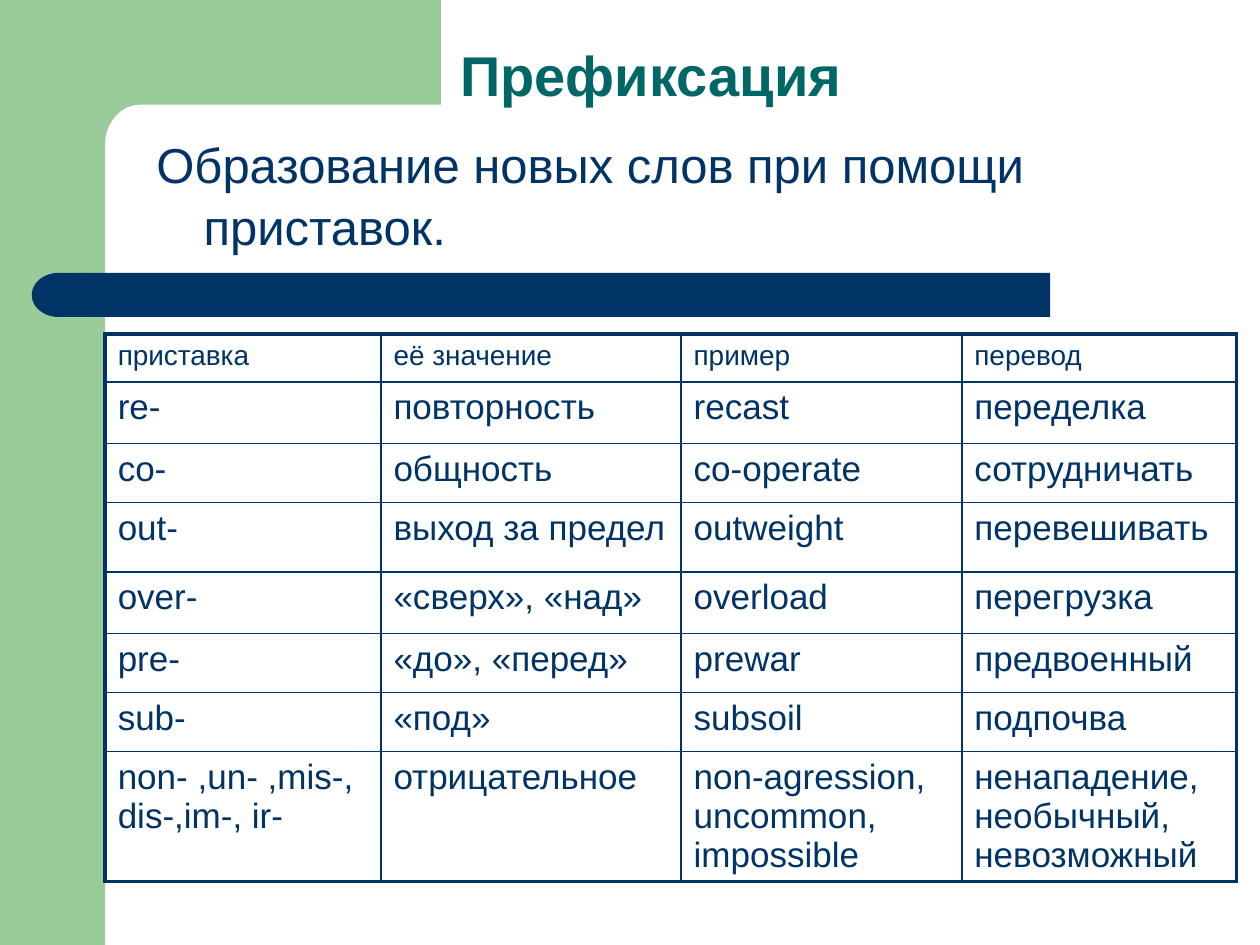
"""Build a slide on English prefixation: title, definition and a table of prefixes."""
from dataclasses import dataclass
from math import cos, pi, sin

from lxml import etree
from pptx import Presentation
from pptx.dml.color import RGBColor
from pptx.enum.shapes import MSO_SHAPE
from pptx.enum.text import MSO_ANCHOR, MSO_AUTO_SIZE, PP_ALIGN
from pptx.oxml.ns import qn
from pptx.util import Cm, Pt

RECTANGLE = MSO_SHAPE.RECTANGLE
DELAY = MSO_SHAPE.FLOWCHART_DELAY
BOTTOM = MSO_ANCHOR.BOTTOM
TOP = MSO_ANCHOR.TOP
NO_AUTOFIT = MSO_AUTO_SIZE.NONE
CENTER = PP_ALIGN.CENTER


@dataclass(frozen=True)
class Theme:
    green: str = "99CC99"
    navy: str = "003366"
    teal: str = "006666"
    font: str = "Arial"
    title: int = 32
    definition: int = 28
    header: int = 16
    entry: int = 20
    frame: float = 2.25
    grid: float = 1


theme = Theme()


def style(paragraph, size, color, bold=False):
    font = paragraph.font
    font.name, font.size, font.bold = theme.font, Pt(size), bold
    font.color.rgb = RGBColor.from_string(color)


def paint(shape, color):
    shape.shadow.inherit = False
    shape.fill.solid()
    shape.fill.fore_color.rgb = RGBColor.from_string(color)
    shape.line.fill.background()


prs = Presentation()
prs.slide_width, prs.slide_height = Cm(25.4), Cm(19.05)
slide = prs.slides.add_slide(prs.slide_layouts[1])
shapes = slide.shapes

for kind, left, top, width, height, color, turn in (
    (RECTANGLE, 0, 0, 2.12, 19.05, theme.green, 0),
    (RECTANGLE, 1.7, 5.5, 19.47, 0.89, theme.navy, 0),
    (DELAY, 0.64, 5.5, 1.08, 0.89, theme.navy, 180),
):
    band = shapes.add_shape(kind, Cm(left), Cm(top), Cm(width), Cm(height))
    band.rotation = turn
    paint(band, color)

ARC_STEPS = 12
angles = [pi / 2 * step / ARC_STEPS for step in range(ARC_STEPS + 1)]
arc = [(2.82 - 0.71 * sin(a), 2.95 - 0.84 * cos(a)) for a in angles]
outline = [(8.89, 2.11), *arc, (2.11, 3.25), (1.27, 3.25), (1.27, 0)]
builder = shapes.build_freeform(Cm(8.89), Cm(0))
builder.add_line_segments([(Cm(x), Cm(y)) for x, y in outline], close=True)
paint(builder.convert_to_shape(), theme.green)

title = shapes.title
title.left, title.top, title.width, title.height = Cm(2.12), Cm(0.71), Cm(22.01), Cm(1.6)
title.text_frame.text = "Префиксация"
title.text_frame.vertical_anchor = BOTTOM
title.text_frame.auto_size = NO_AUTOFIT
heading = title.text_frame.paragraphs[0]
heading.alignment = CENTER
heading.line_spacing = 0.9
style(heading, theme.title, theme.teal, bold=True)

body = slide.placeholders[1]
body.left, body.top, body.width, body.height = Cm(2.9), Cm(2.51), Cm(21.36), Cm(2.79)
body.text_frame.text = "Образование новых слов при помощи приставок."
body.text_frame.vertical_anchor = TOP
body.text_frame.auto_size = NO_AUTOFIT
definition = body.text_frame.paragraphs[0]
properties = definition._p.get_or_add_pPr()
properties.set("marL", str(Cm(0.95)))
properties.set("indent", str(Cm(-0.95)))
etree.SubElement(properties, qn("a:buNone"))
definition.line_spacing = 1.06
style(definition, theme.definition, theme.navy)

prefixes = [
    ("приставка", "её значение", "пример", "перевод"),
    ("re-", "повторность", "recast", "переделка"),
    ("co-", "общность", "co-operate", "сотрудничать"),
    ("out-", "выход за предел", "outweight", "перевешивать"),
    ("over-", "«сверх», «над»", "overload", "перегрузка"),
    ("pre-", "«до», «перед»", "prewar", "предвоенный"),
    ("sub-", "«под»", "subsoil", "подпочва"),
    ("non- ,un- ,mis-, dis-,im-, ir-", "отрицательное",
     "non-agression, uncommon, impossible", "ненападение, необычный, невозможный"),
]
column_widths = [5.56, 6.05, 5.66, 5.54]
row_heights = [0.97, 1.24, 1.19, 1.4, 1.24, 1.19, 1.19, 2.6]
last_row, last_column = len(row_heights) - 1, len(column_widths) - 1

table = shapes.add_table(
    len(row_heights), len(column_widths), Cm(2.12), Cm(6.73),
    Cm(sum(column_widths)), Cm(sum(row_heights)),
).table
for column, width in zip(table.columns, column_widths):
    column.width = Cm(width)
for row, height in zip(table.rows, row_heights):
    row.height = Cm(height)

for r, entries in enumerate(prefixes):
    for c, entry in enumerate(entries):
        cell = table.cell(r, c)
        cell.text = entry
        cell.fill.background()
        style(cell.text_frame.paragraphs[0], theme.entry if r else theme.header, theme.navy)
        edges = {"L": c == 0, "R": c == last_column, "T": r == 0, "B": r == last_row}
        for position, (side, outer) in enumerate(edges.items()):
            border = etree.Element(qn(f"a:ln{side}"), w=str(Pt(theme.frame if outer else theme.grid)))
            ink = etree.SubElement(border, qn("a:solidFill"))
            etree.SubElement(ink, qn("a:srgbClr"), val=theme.navy)
            cell._tc.get_or_add_tcPr().insert(position, border)

prs.save("out.pptx")
